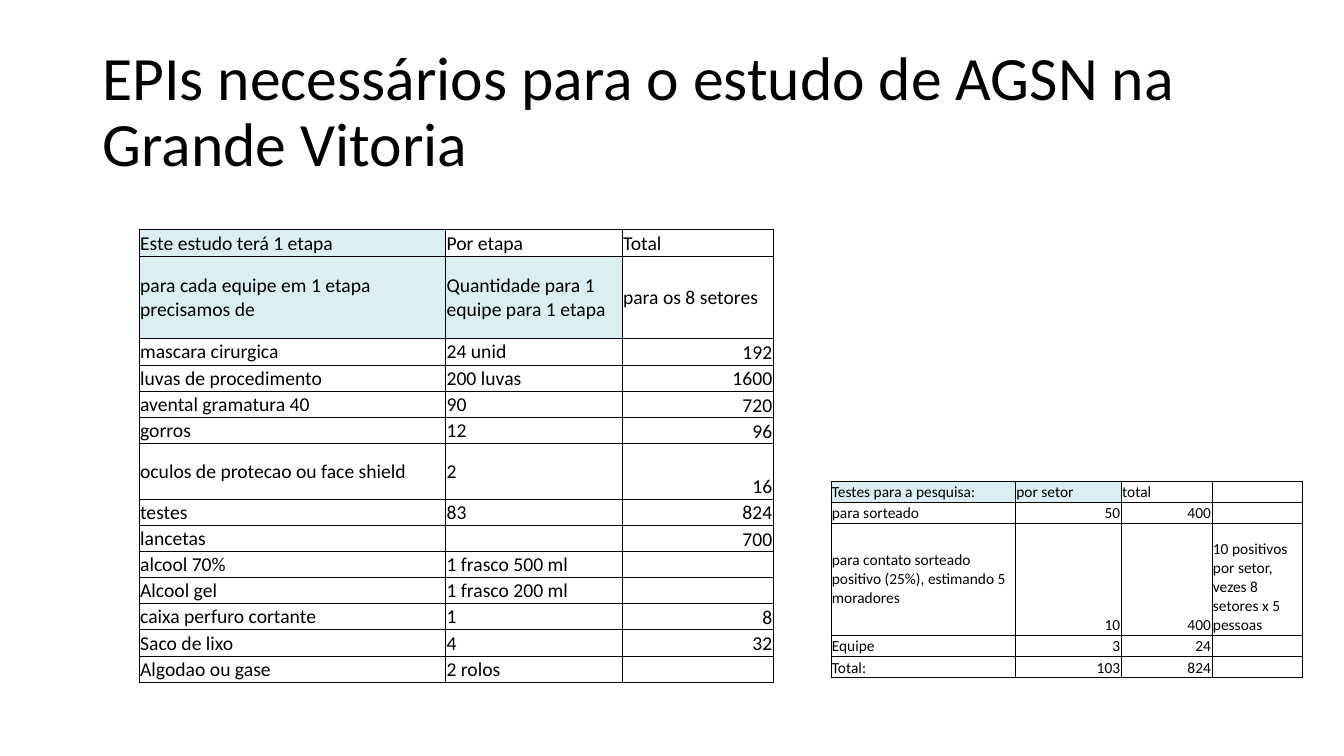
import pptx
import pptx.util
import pptx.dml.color
import pptx.enum.text
import pptx.oxml
import pptx.oxml.ns
from dataclasses import dataclass
from lxml import etree

PX = 9144  # 100 px to the inch
ANCHOR = pptx.enum.text.MSO_ANCHOR
ALIGN = pptx.enum.text.PP_ALIGN


@dataclass(frozen=True)
class Theme:
    font: str = "Calibri"
    ink: str = "000000"
    tint: str = "DAEEF3"
    title: int = 44
    body: int = 14
    small: int = 11
    rule: float = 0.5


class Deck:
    def __init__(self, theme, width, height):
        self.theme = theme
        self.prs = pptx.Presentation()
        self.prs.slide_width, self.prs.slide_height = width * PX, height * PX
        self.slide = self.prs.slides.add_slide(self.prs.slide_layouts[6])

    def run(self, para, text, size):
        run = para.add_run()
        run.text = text
        run.font.name = self.theme.font
        run.font.size = pptx.util.Pt(size)
        run.font.color.rgb = pptx.dml.color.RGBColor.from_string(self.theme.ink)

    def title(self, text, *box):
        frame = self.slide.shapes.add_textbox(*(n * PX for n in box)).text_frame
        frame.word_wrap = True
        frame.vertical_anchor = ANCHOR.MIDDLE
        para = frame.paragraphs[0]
        para.line_spacing = 0.9
        self.run(para, text, self.theme.title)

    def border(self, cell):
        props = cell._tc.get_or_add_tcPr()
        for side in ("a:lnL", "a:lnR", "a:lnT", "a:lnB"):
            line = etree.SubElement(props, pptx.oxml.ns.qn(side))
            line.set("w", str(pptx.util.Pt(self.theme.rule)))
            fill = etree.SubElement(line, pptx.oxml.ns.qn("a:solidFill"))
            color = etree.SubElement(fill, pptx.oxml.ns.qn("a:srgbClr"))
            color.set("val", self.theme.ink)

    def cell(self, cell, value, size, low, tint):
        """Whole numbers sit bottom right; words sit left."""
        number = isinstance(value, int)
        cell.margin_left = cell.margin_right = cell.margin_top = PX
        cell.margin_bottom = 0
        cell.vertical_anchor = ANCHOR.BOTTOM if number or low else ANCHOR.MIDDLE
        self.border(cell)
        if tint:
            cell.fill.solid()
            cell.fill.fore_color.rgb = pptx.dml.color.RGBColor.from_string(self.theme.tint)
        else:
            cell.fill.background()
        para = cell.text_frame.paragraphs[0]
        para.alignment = ALIGN.RIGHT if number else ALIGN.LEFT
        if value == "":
            end = etree.SubElement(para._p, pptx.oxml.ns.qn("a:endParaRPr"))
            end.set("sz", str(size * 100))
        else:
            self.run(para, str(value), size)

    def table(self, left, top, cols, rows, data, size, low, tints):
        """low(row, col) tells which words sit at the bottom."""
        box = (left, top, sum(cols), sum(rows))
        frame = self.slide.shapes.add_table(len(rows), len(cols), *(n * PX for n in box))
        table = frame.table
        table.first_row = table.horz_banding = False
        for col, width in zip(table.columns, cols):
            col.width = width * PX
        for row, height in zip(table.rows, rows):
            row.height = height * PX
        for r, line in enumerate(data):
            for c, value in enumerate(line):
                self.cell(table.cell(r, c), value, size, low(r, c), (r, c) in tints)


# Content
ITEMS = [
    ("Este estudo terá 1 etapa", "Por etapa", "Total"),
    ("para cada equipe em 1 etapa precisamos de",
     "Quantidade para 1 equipe para 1 etapa", "para os 8 setores"),
    ("mascara cirurgica", "24 unid", 192),
    ("luvas de procedimento", "200 luvas", 1600),
    ("avental gramatura 40", "90", 720),
    ("gorros", "12", 96),
    ("oculos de protecao ou face shield", "2", 16),
    ("testes", "83", 824),
    ("lancetas", "", 700),
    ("alcool 70%", "1 frasco 500 ml", ""),
    ("Alcool gel", "1 frasco 200 ml", ""),
    ("caixa perfuro cortante", "1", 8),
    ("Saco de lixo", "4", 32),
    ("Algodao ou gase", "2 rolos", ""),
]
TESTS = [
    ("Testes para a pesquisa:", "por setor", "total", ""),
    ("para sorteado", 50, 400, ""),
    ("para contato sorteado positivo (25%), estimando 5 moradores", 10, 400,
     "10 positivos por setor, vezes 8 setores x 5 pessoas"),
    ("Equipe", 3, 24, ""),
    ("Total:", 103, 824, ""),
]


def main():
    theme = Theme()
    deck = Deck(theme, 1333, 750)

    # Heading
    deck.title("EPIs necessários para o estudo de AGSN na Grande Vitoria", 92, 40, 1150, 145)

    # Supplies for each team
    deck.table(138, 227, (304, 175, 150), [27, 82] + [26] * 4 + [55] + [26] * 7,
               ITEMS, theme.body, lambda r, c: r == 0, {(0, 0), (1, 0), (1, 1)})

    # Tests for the survey
    deck.table(824, 477, (183, 105, 90, 90), (21, 21, 111, 21, 21),
               TESTS, theme.small, lambda r, c: c > 0 or r > 2, {(0, 0), (0, 1)})

    deck.prs.save("out.pptx")


if __name__ == "__main__":
    main()
